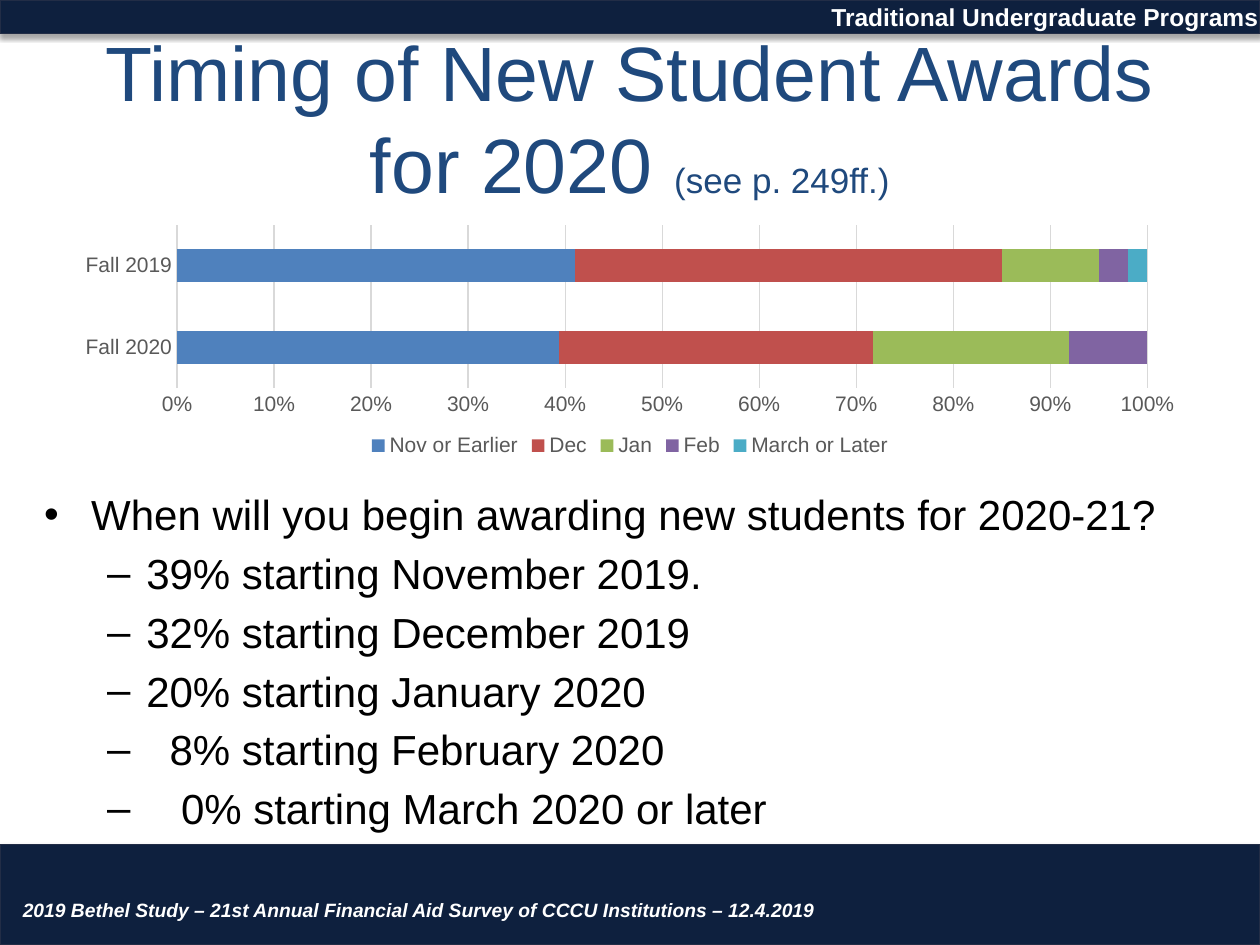
from lxml import etree
from pptx import Presentation
from pptx.chart.data import CategoryChartData
from pptx.dml.color import RGBColor
from pptx.enum.chart import XL_CHART_TYPE, XL_LEGEND_POSITION, XL_TICK_MARK
from pptx.enum.shapes import MSO_SHAPE
from pptx.enum.text import MSO_ANCHOR, PP_ALIGN
from pptx.oxml.ns import qn
from pptx.util import Cm, Pt

BAR_STACKED_100 = XL_CHART_TYPE.BAR_STACKED_100
LEGEND_BOTTOM = XL_LEGEND_POSITION.BOTTOM
NO_TICK = XL_TICK_MARK.NONE
RECTANGLE = MSO_SHAPE.RECTANGLE
MIDDLE, TOP = MSO_ANCHOR.MIDDLE, MSO_ANCHOR.TOP
CENTER, LEFT = PP_ALIGN.CENTER, PP_ALIGN.LEFT

FONT = "Arial"
NAVY, NAVY_EDGE, TITLE_BLUE = "0E203E", "222D46", "1F497D"
WHITE, BLACK, AXIS_GRAY, GRID_GRAY = "FFFFFF", "000000", "595959", "D9D9D9"

SLIDE_WIDTH, SLIDE_HEIGHT = 25.4, 19.05
HEADER_BOX = (0, 0, SLIDE_WIDTH, 0.68)
FOOTER_BOX = (0, 17.02, SLIDE_WIDTH, 2.03)
TITLE_BOX = (1.27, 0.76, 22.86, 3.18)
CHART_BOX = (1.27, 4.44, 22.86, 4.87)
BODY_BOX = (0.64, 9.73, 24.33, 7.29)

SEASONS = ["Fall 2020", "Fall 2019"]
AWARD_MONTHS = [
    ("Nov or Earlier", (39, 41), "4F81BD"),
    ("Dec", (32, 44), "C0504D"),
    ("Jan", (20, 10), "9BBB59"),
    ("Feb", (8, 3), "8064A2"),
    ("March or Later", (0, 2), "4BACC6"),
]
QUESTION = "When will you begin awarding new students for 2020-21?"
# Each answer with its extra indent in cm
ANSWERS = [
    ("39% starting November 2019.", 0),
    ("32% starting December 2019", 0),
    ("20% starting January 2020", 0),
    ("8% starting February 2020", 0.47),
    ("0% starting March 2020 or later", 0.7),
]


def rgb(hex_color):
    return RGBColor.from_string(hex_color)


def lengths(box):
    return [Cm(value) for value in box]


def write(paragraph, text, size, color=BLACK, bold=False, italic=False):
    run = paragraph.add_run()
    run.text = text
    style_font(run.font, size, color)
    run.font.bold, run.font.italic = bold, italic


def style_font(font, size, color):
    font.name, font.size = FONT, Pt(size)
    font.color.rgb = rgb(color)


def add_frame(slide, box, anchor=TOP, align=LEFT):
    frame = slide.shapes.add_textbox(*lengths(box)).text_frame
    frame.word_wrap = True
    frame.vertical_anchor = anchor
    frame.paragraphs[0].alignment = align
    return frame


def add_band(slide, box):
    band = slide.shapes.add_shape(RECTANGLE, *lengths(box))
    band.fill.solid()
    band.fill.fore_color.rgb = rgb(NAVY)
    band.line.color.rgb = rgb(NAVY_EDGE)
    band.line.width = Pt(0.75)
    band.shadow.inherit = False
    effects = band._element.spPr.find(qn("a:effectLst"))
    shadow = etree.SubElement(effects, qn("a:outerShdw"), blurRad=str(Pt(3.1)),
                              dist=str(Pt(1.8)), dir="5400000", rotWithShape="0")
    shadow_color = etree.SubElement(shadow, qn("a:srgbClr"), val=BLACK)
    etree.SubElement(shadow_color, qn("a:alpha"), val="35000")


def add_header(slide, box):
    left, top, width, height = box
    add_band(slide, box)
    frame = add_frame(slide, (left + 16.51, top - 0.08, 9.96, height + 0.18))
    write(frame.paragraphs[0], "Traditional Undergraduate Programs", 14, WHITE, bold=True)


def add_footer(slide, box):
    left, top, width, height = box
    add_band(slide, box)
    frame = add_frame(slide, (left + 0.21, top + 0.96, 18.62, 0.69))
    write(frame.paragraphs[0],
          "2019 Bethel Study – 21st Annual Financial Aid Survey of CCCU Institutions – 12.4.2019",
          11, WHITE, bold=True, italic=True)


def add_title(slide, box):
    title = add_frame(slide, box, MIDDLE, CENTER).paragraphs[0]
    write(title, "Timing of New Student Awards for 2020 ", 44, TITLE_BLUE)
    write(title, "(see p. 249ff.)", 20, TITLE_BLUE)


def add_awards_chart(slide, box):
    data = CategoryChartData()
    data.categories = SEASONS
    for month, shares, _ in AWARD_MONTHS:
        data.add_series(month, shares)
    chart = slide.shapes.add_chart(BAR_STACKED_100, *lengths(box), data).chart
    chart.has_title = False
    style_font(chart.font, 10, BLACK)

    plot = chart.plots[0]
    plot.gap_width, plot.overlap, plot.vary_by_categories = 150, 100, False
    for series, (_, _, color) in zip(plot.series, AWARD_MONTHS):
        series.format.fill.solid()
        series.format.fill.fore_color.rgb = rgb(color)

    seasons, percents = chart.category_axis, chart.value_axis
    for axis in (seasons, percents):
        axis.major_tick_mark = axis.minor_tick_mark = NO_TICK
        style_font(axis.tick_labels.font, 12, AXIS_GRAY)
    percents.has_major_gridlines = True
    percents.format.line.fill.background()
    percents.tick_labels.number_format = "0%"
    percents.tick_labels.number_format_is_linked = False
    for line in (seasons.format.line, percents.major_gridlines.format.line):
        line.color.rgb = rgb(GRID_GRAY)
        line.width = Pt(0.75)

    chart.has_legend = True
    chart.legend.position = LEGEND_BOTTOM
    chart.legend.include_in_layout = False
    style_font(chart.legend.font, 12, AXIS_GRAY)


def set_bullet(paragraph, mark, margin, hanging):
    properties = paragraph._p.get_or_add_pPr()
    properties.set("marL", str(Cm(margin)))
    properties.set("indent", str(-Cm(hanging)))
    etree.SubElement(properties, qn("a:buFont"), typeface=FONT)
    etree.SubElement(properties, qn("a:buChar"), char=mark)


def add_answers(slide, box):
    frame = add_frame(slide, box)
    question = frame.paragraphs[0]
    set_bullet(question, "•", 0.95, 0.95)
    write(question, QUESTION, 24)
    for text, extra in ANSWERS:
        answer = frame.add_paragraph()
        answer.level = 1
        answer.space_before = Pt(4.8)
        set_bullet(answer, "–", 2.06 + extra, 0.79 + extra)
        write(answer, text, 24)


def main():
    deck = Presentation()
    deck.slide_width, deck.slide_height = Cm(SLIDE_WIDTH), Cm(SLIDE_HEIGHT)
    slide = deck.slides.add_slide(deck.slide_layouts[6])
    add_header(slide, HEADER_BOX)
    add_footer(slide, FOOTER_BOX)
    add_title(slide, TITLE_BOX)
    add_awards_chart(slide, CHART_BOX)
    add_answers(slide, BODY_BOX)
    deck.save("out.pptx")


if __name__ == "__main__":
    main()
